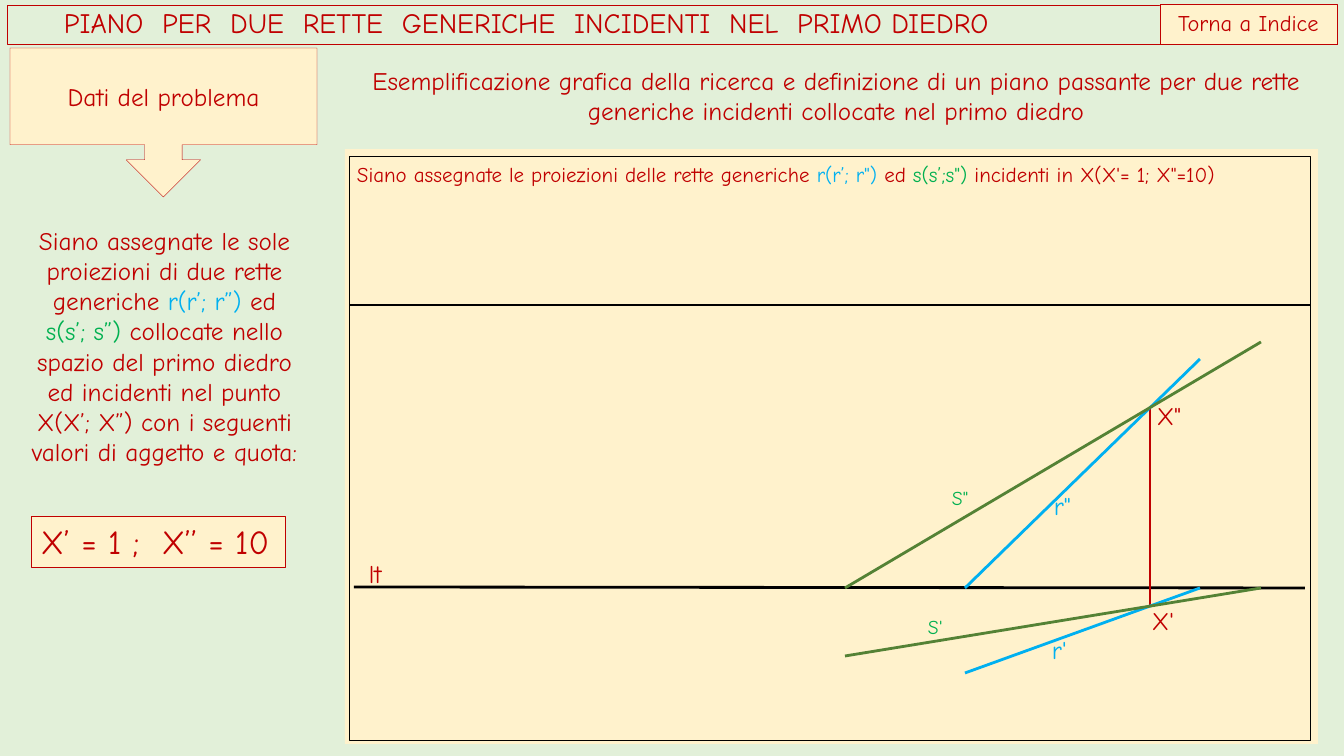
from dataclasses import dataclass
from typing import Optional

from lxml.etree import SubElement
from pptx import Presentation
from pptx.dml.color import RGBColor
from pptx.enum.shapes import MSO_CONNECTOR as Connector, MSO_SHAPE as Preset
from pptx.enum.text import MSO_ANCHOR as Anchor, PP_ALIGN as Align
from pptx.oxml.ns import qn
from pptx.util import Emu, Pt

FONT = "Comic Neue"
RED, BLUE, GREEN = "C00000", "00B0F0", "00B050"
DARK_GREEN, BLACK, CREAM, MINT = "548235", "000000", "FFF2CC", "E2F0D9"
HAIRLINE, THIN = 0, 0.25

Run = tuple[str, str]


@dataclass
class Box:
    left: int
    top: int
    width: int
    height: int
    paragraphs: tuple[tuple[Run, ...], ...] = ()
    size: int = 18
    fill: Optional[str] = CREAM
    border: Optional[str] = None
    border_width: float = THIN
    align: Align = Align.LEFT
    anchor: Anchor = Anchor.TOP
    preset: Preset = Preset.RECTANGLE
    margins: tuple[int, int] = (10, 5)
    indent: int = 0
    line_spacing: float = 1.0
    wrap: bool = True


@dataclass
class Segment:
    x1: int
    y1: int
    x2: int
    y2: int
    color: str


def px(length: int) -> Emu:
    return Emu(round(length * 914400 / 100.8))


def rgb(color: str) -> RGBColor:
    return RGBColor.from_string(color)


def red(text: str) -> tuple[tuple[Run, ...], ...]:
    return (((text, RED),),)


def label(left: int, top: int, text: str, color: str, size: int = 18) -> Box:
    return Box(left, top, 28, 30 if size == 18 else 24, (((text, color),),), size,
               fill=None, margins=(0, 0), wrap=False)


def draw_box(slide, box: Box) -> None:
    shape = slide.shapes.add_shape(
        box.preset, px(box.left), px(box.top), px(box.width), px(box.height))
    shape.shadow.inherit = False
    if box.fill:
        shape.fill.solid()
        shape.fill.fore_color.rgb = rgb(box.fill)
    else:
        shape.fill.background()
    if box.border:
        shape.line.color.rgb = rgb(box.border)
        shape.line.width = Pt(box.border_width)
    else:
        shape.line.fill.background()
    frame = shape.text_frame
    frame.word_wrap = box.wrap
    frame.vertical_anchor = box.anchor
    side, edge = box.margins
    frame.margin_left, frame.margin_right = px(side + box.indent), px(side)
    frame.margin_top = frame.margin_bottom = px(edge)
    for index, runs in enumerate(box.paragraphs):
        paragraph = frame.add_paragraph() if index else frame.paragraphs[0]
        paragraph.alignment = box.align
        paragraph.line_spacing = box.line_spacing
        for text, color in runs:
            run = paragraph.add_run()
            run.text = text
            run.font.name = FONT
            run.font.size = Pt(box.size)
            run.font.color.rgb = rgb(color)


def draw_segment(slide, segment: Segment) -> None:
    line = slide.shapes.add_connector(
        Connector.STRAIGHT, px(segment.x1), px(segment.y1), px(segment.x2), px(segment.y2))
    line.line.color.rgb = rgb(segment.color)
    line.line.width = Pt(HAIRLINE)
    SubElement(line._element.spPr, qn("a:effectLst"))


HEADER = [
    Box(7, 5, 1330, 39,
        red("PIANO  PER  DUE  RETTE  GENERICHE  INCIDENTI  NEL  PRIMO DIEDRO"),
        20, None, RED, anchor=Anchor.MIDDLE, indent=47, line_spacing=0.9),
    Box(10, 48, 307, 149, red("Dati del problema"), border=RED, align=Align.CENTER,
        anchor=Anchor.MIDDLE, preset=Preset.DOWN_ARROW_CALLOUT),
    Box(1160, 4, 177, 40, red("Torna a Indice"), 16, border=RED, align=Align.CENTER),
    Box(340, 60, 992, 72,
        red("Esemplificazione grafica della ricerca e definizione di un piano passante "
            "per due rette generiche incidenti collocate nel primo diedro"),
        fill=None, align=Align.CENTER),
]

DRAWING_SHEET = [
    Box(345, 149, 973, 595),
    Box(350, 157, 961, 584, border=BLACK, border_width=HAIRLINE),
    label(369, 558, "lt", RED),
    label(1152, 605, "X'", RED),
    label(1157, 400, 'X"', RED),
    label(928, 615, "S'", GREEN, 14),
    label(1052, 634, "r'", BLUE),
    label(1054, 490, 'r"', BLUE),
    label(952, 486, 'S"', GREEN, 14),
]

PROJECTIONS = [
    Segment(354, 587, 1305, 588, BLACK),
    Segment(1150, 588, 1150, 606, RED),
    Segment(1150, 588, 1150, 407, RED),
    Segment(1200, 359, 965, 588, BLUE),
    Segment(965, 673, 1200, 588, BLUE),
    Segment(1261, 588, 845, 656, DARK_GREEN),
    Segment(1261, 342, 845, 588, DARK_GREEN),
    Segment(1311, 305, 350, 305, BLACK),
]

PROBLEM_DATA = [
    Box(357, 162, 948, 25, ((
        ("Siano assegnate le proiezioni delle rette generiche ", RED),
        ('r(r’; r") ', BLUE),
        ("ed ", RED),
        ('s(s’;s") ', GREEN),
        ("incidenti in X(X'= 1; X\"=10)", RED),
    ),), 15, margins=(0, 0)),
    Box(10, 220, 309, 285, (
        (("Siano assegnate le sole proiezioni di due rette generiche ", RED),
         ("r(r’; r”) ", BLUE),
         ("ed", RED)),
        (("s(s’; s”) ", GREEN),
         ("collocate nello spazio del primo diedro ed incidenti nel punto X(X’; X”) "
          "con i seguenti valori di aggetto e quota:", RED)),
    ), fill=None, align=Align.CENTER),
    Box(31, 516, 254, 51, red("X’ = 1 ;  X’’ = 10"), 24, border=RED),
]


def main() -> None:
    deck = Presentation()
    deck.slide_width, deck.slide_height = px(1344), px(756)
    slide = deck.slides.add_slide(deck.slide_layouts[6])
    slide.background.fill.solid()
    slide.background.fill.fore_color.rgb = rgb(MINT)
    for box in HEADER + DRAWING_SHEET:
        draw_box(slide, box)
    for segment in PROJECTIONS:
        draw_segment(slide, segment)
    for box in PROBLEM_DATA:
        draw_box(slide, box)
    deck.save("out.pptx")


if __name__ == "__main__":
    main()
